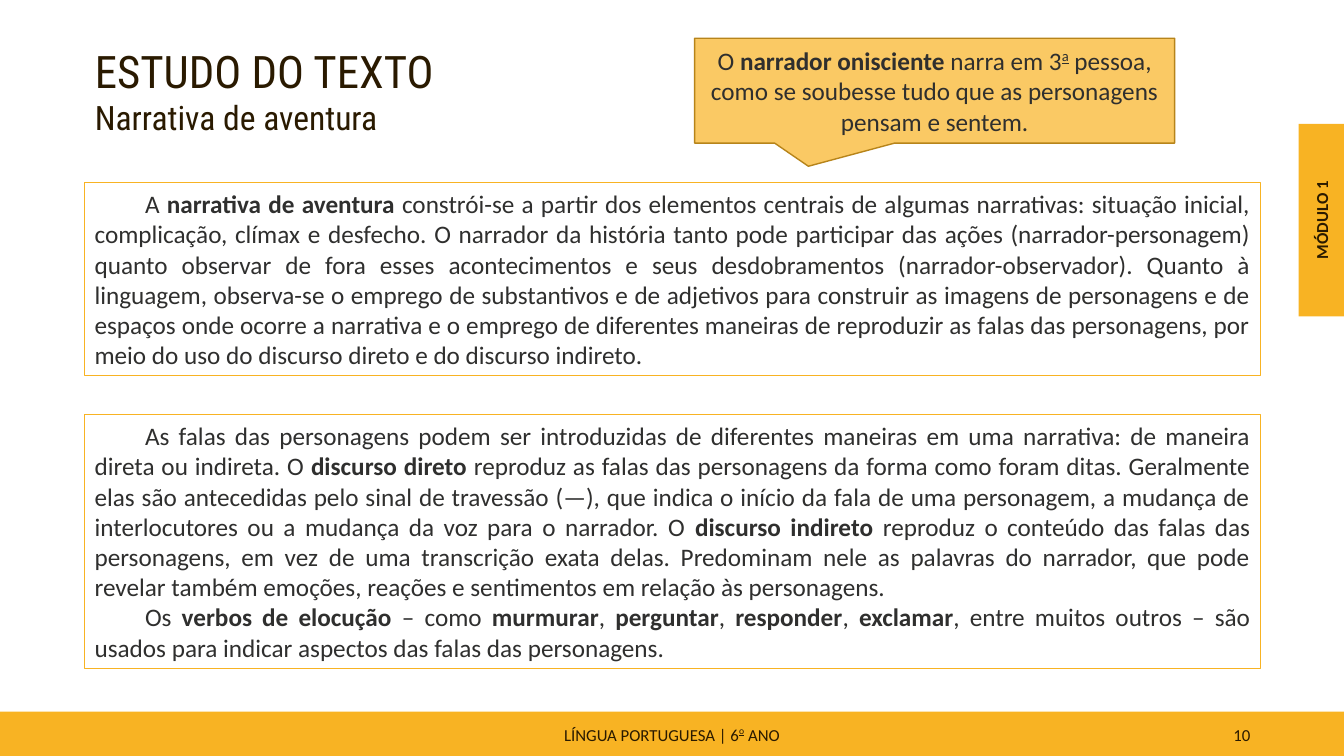
from pptx import Presentation
from pptx.dml.color import RGBColor
from pptx.enum.shapes import MSO_SHAPE as Shape
from pptx.enum.text import MSO_ANCHOR as Anchor, PP_ALIGN as Align
from pptx.oxml.xmlchemy import OxmlElement
from pptx.util import Inches, Pt

YELLOW, BROWN, INK, GOLD = "F8B323", "2A1A00", "2F2F2E", "B7841A"

ADVENTURE = [
    "A *narrativa de aventura *constrói-se a partir dos elementos centrais de algumas narrativas: "
    "situação inicial, complicação, clímax e desfecho. O narrador da história tanto pode participar "
    "das ações (narrador-personagem) quanto observar de fora esses acontecimentos e seus "
    "desdobramentos (narrador-observador). Quanto à linguagem, observa-se o emprego de substantivos "
    "e de adjetivos para construir as imagens de personagens e de espaços onde ocorre a narrativa e "
    "o emprego de diferentes maneiras de reproduzir as falas das personagens, por meio do uso do "
    "discurso direto e do discurso indireto.",
]
SPEECH = [
    "As falas das personagens podem ser introduzidas de diferentes maneiras em uma narrativa: de "
    "maneira direta ou indireta. O *discurso direto *reproduz as falas das personagens da forma como "
    "foram ditas. Geralmente elas são antecedidas pelo sinal de travessão (—), que indica o início da "
    "fala de uma personagem, a mudança de interlocutores ou a mudança da voz para o narrador. O "
    "*discurso indireto *reproduz o conteúdo das falas das personagens, em vez de uma transcrição "
    "exata delas. Predominam nele as palavras do narrador, que pode revelar também emoções, reações "
    "e sentimentos em relação às personagens.",
    "Os *verbos de elocução *– como *murmurar*, *perguntar*, *responder*, *exclamar*, entre muitos "
    "outros – são usados para indicar aspectos das falas das personagens.",
]
NARRATOR = ["O *narrador onisciente *narra em 3^a^ pessoa, como se soubesse tudo que as personagens "
            "pensam e sentem."]


def color(value):
    return RGBColor.from_string(value)


def place(shape, box):
    shape.left, shape.top, shape.width, shape.height = map(Inches, box)


def add_spans(para, text, raised):
    for bold_index, chunk in enumerate(text.split("*")):
        for raised_index, piece in enumerate(chunk.split("^")):
            if not piece:
                continue
            span = para.add_run()
            span.text = piece
            if bold_index % 2:
                span.font.bold = True
            if raised_index % 2:
                span.font.underline = True
                span.font._element.set("baseline", str(raised * 1000))


def write(shape, texts, size, ink, align, font="Calibri", anchor=Anchor.MIDDLE,
          indent=0, after=0, raised=35):
    frame = shape.text_frame
    frame.word_wrap = True
    frame.vertical_anchor = anchor
    for index, text in enumerate(texts):
        para = frame.add_paragraph() if index else frame.paragraphs[0]
        para.alignment = align
        para.space_after = Pt(after)
        para.font.size = Pt(size)
        para.font.name = font
        para.font.color.rgb = color(ink)
        if indent:
            properties = para._p.get_or_add_pPr()
            properties.set("marL", "0")
            properties.set("indent", str(Inches(indent)))
        add_spans(para, text, raised)


def add_block(page, box, kind=Shape.RECTANGLE, fill=None, line=None, weight=0.75):
    block = page.shapes.add_shape(kind, *map(Inches, box))
    block.shadow.inherit = False
    if fill:
        block.fill.solid()
        block.fill.fore_color.rgb = color(fill)
    else:
        block.fill.background()
    if line:
        block.line.color.rgb = color(line)
        block.line.width = Pt(weight)
    else:
        block.line.fill.background()
    return block


def add_label(page, box, text, size, align, **options):
    label = page.shapes.add_textbox(*map(Inches, box))
    write(label, [text], size, BROWN, align, **options)
    return label


def add_heading(page, box):
    title = page.shapes.title
    place(title, box)
    write(title, ["ESTUDO DO TEXTO", "Narrativa de aventura"], 32, BROWN, Align.LEFT,
          font="Roboto Condensed", anchor=Anchor.TOP)
    title.text_frame.paragraphs[1].font.size = Pt(24)


def add_footer(page, box):
    left, top, width, height = box
    add_block(page, box, fill=YELLOW)
    row = top + 0.04
    add_label(page, (left + (width - 4.5) / 2, row, 4.5, 0.38), "LÍNGUA PORTUGUESA | 6^o^ ANO",
              12, Align.CENTER, after=6, raised=45)
    add_label(page, (left + width - 3.91, row, 3.08, 0.38), "10", 12, Align.RIGHT, after=6)


def add_module_tab(page, box):
    left, top, width, height = box
    add_block(page, box, fill=YELLOW)
    label_box = (left + (width - height) / 2, top + (height - 0.3) / 2, height, 0.3)
    label = add_label(page, label_box, "*MÓDULO 1*", 12, Align.CENTER)
    label.rotation = 270


def add_panel(page, box, texts):
    panel = add_block(page, box, line=YELLOW)
    write(panel, texts, 18, INK, Align.JUSTIFY, indent=0.5)


def add_callout(page, box, texts):
    callout = add_block(page, box, Shape.RECTANGULAR_CALLOUT, YELLOW, GOLD, 1)
    callout.adjustments[0] = -0.263
    callout.adjustments[1] = 0.721
    alpha = OxmlElement("a:alpha")
    alpha.set("val", "70000")
    callout.fill._xPr.solidFill.srgbClr.append(alpha)
    write(callout, texts, 18, INK, Align.CENTER)


def main():
    deck = Presentation()
    deck.slide_width, deck.slide_height = Inches(13.33), Inches(7.5)
    page = deck.slides.add_slide(deck.slide_layouts[5])
    add_heading(page, (0.84, 0.38, 4.13, 1.04))
    add_footer(page, (0, 7.06, 13.33, 0.44))
    add_module_tab(page, (12.88, 1.23, 0.45, 1.91))
    add_panel(page, (0.84, 1.81, 11.66, 1.92), ADVENTURE)
    add_panel(page, (0.84, 4.11, 11.66, 2.52), SPEECH)
    add_callout(page, (6.89, 0.38, 4.76, 1.04), NARRATOR)
    deck.save("out.pptx")


if __name__ == "__main__":
    main()
